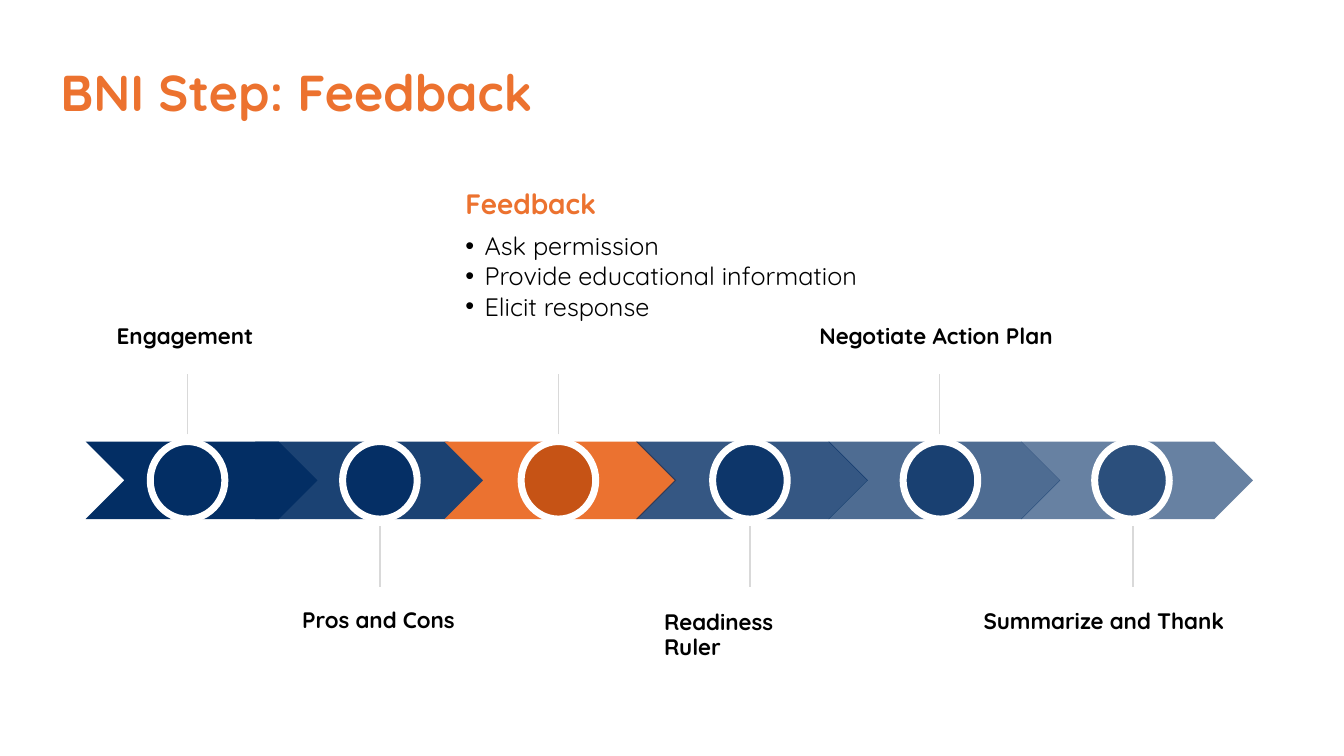
from dataclasses import dataclass

from lxml import etree
from pptx import Presentation
from pptx.dml.color import RGBColor
from pptx.enum.shapes import MSO_CONNECTOR, MSO_SHAPE
from pptx.enum.text import MSO_ANCHOR, MSO_AUTO_SIZE, PP_ALIGN
from pptx.oxml.ns import qn
from pptx.shapes.autoshape import Shape
from pptx.slide import Slide
from pptx.text.text import TextFrame, _Paragraph
from pptx.util import Pt

CHEVRON, ELLIPSE = MSO_SHAPE.CHEVRON, MSO_SHAPE.OVAL
STRAIGHT = MSO_CONNECTOR.STRAIGHT
LEFT = PP_ALIGN.LEFT
TOP, MIDDLE = MSO_ANCHOR.TOP, MSO_ANCHOR.MIDDLE
NO_AUTOFIT = MSO_AUTO_SIZE.NONE

FONT = "Quicksand"
COLOURS = {
    "navy": "032E64", "orange": "EB7230", "rust": "C25013", "heading": "EC722F",
    "white": "FFFFFF", "black": "000000", "grey": "D9D9D9",
}

BAND_TOP, BAND_HEIGHT = 315.4, 55.4
CHEVRON_WIDTH, CIRCLE_WIDTH = 165.6, 53.3
STEM_LENGTH, STEM_GAP = 43.2, 5.1


@dataclass(frozen=True)
class Step:
    left: float  # chevron
    centre: float  # circle
    stem: float
    above: bool
    chevron_opacity: int
    circle_opacity: int
    chevron_colour: str = "navy"
    circle_colour: str = "navy"


@dataclass(frozen=True)
class Label:
    text: str
    left: float
    top: float
    width: float
    wrap: bool = False


STEPS = [
    Step(61.2, 134, 134, True, 100, 100),
    Step(182.2, 271.4, 271.4, False, 90, 90),
    Step(317.5, 398.9, 398.9, True, 100, 90, "orange", "rust"),
    Step(454.3, 535.7, 535.7, False, 80, 80),
    Step(591.8, 671.8, 671, True, 70, 70),
    Step(729.4, 808.6, 809.3, False, 60, 60),
]
LABELS = [
    Label("Engagement", 76.3, 229, 115.2),
    Label("Pros and Cons", 208.8, 431.5, 126),
    Label("Readiness Ruler", 467.3, 433.4, 130, True),
    Label("Negotiate Action Plan", 578.2, 229, 186.5),
    Label("Summarize and Thank", 695.5, 432, 187.2),
]
FEEDBACK = ["Feedback", "Ask permission", "Provide educational information", "Elicit response"]


def colour(name: str) -> RGBColor:
    return RGBColor.from_string(COLOURS[name])


def add_band_shape(page: Slide, kind: MSO_SHAPE, left: float, width: float,
                   fill: str, opacity: int) -> Shape:
    shape = page.shapes.add_shape(kind, Pt(left), Pt(BAND_TOP), Pt(width), Pt(BAND_HEIGHT))
    shape.shadow.inherit = False
    shape.fill.solid()
    shape.fill.fore_color.rgb = colour(fill)
    shape.line.fill.background()
    if opacity < 100:
        solid = shape.fill._xPr.find(qn("a:solidFill"))
        etree.SubElement(solid[0], qn("a:alpha"), val=str(opacity * 1000))
    return shape


def add_circle(page: Slide, step: Step) -> None:
    circle = add_band_shape(page, ELLIPSE, step.centre - CIRCLE_WIDTH / 2, CIRCLE_WIDTH,
                            step.circle_colour, step.circle_opacity)
    circle.line.color.rgb = colour("white")
    circle.line.width = Pt(5)


def add_stem(page: Slide, step: Step) -> None:
    if step.above:
        start = BAND_TOP - STEM_GAP
    else:
        start = BAND_TOP + BAND_HEIGHT + STEM_GAP + STEM_LENGTH
    stem = page.shapes.add_connector(STRAIGHT, Pt(step.stem), Pt(start),
                                     Pt(step.stem), Pt(start - STEM_LENGTH))
    stem.line.color.rgb = colour("grey")
    stem.line.width = Pt(1)
    etree.SubElement(stem._element.spPr, qn("a:effectLst"))


def format_para(para: _Paragraph, size: float, ink: str, bold: bool = True,
                spacing: float = 0.9, after: float = 0) -> None:
    para.alignment = LEFT
    para.line_spacing = spacing
    para.space_before = Pt(0)
    para.space_after = Pt(after)
    for span in para.runs:
        span.font.name = FONT
        span.font.size = Pt(size)
        span.font.bold = bold
        span.font.color.rgb = colour(ink)


def add_bullet(para: _Paragraph, indent: float) -> None:
    properties = para._p.get_or_add_pPr()
    properties.set("marL", str(Pt(indent)))
    properties.set("indent", str(-Pt(indent)))
    etree.SubElement(properties, qn("a:buFont"), typeface="Arial")
    etree.SubElement(properties, qn("a:buChar"), char="•")


def add_text_box(page: Slide, left: float, top: float, width: float, height: float,
                 wrap: bool) -> TextFrame:
    frame = page.shapes.add_textbox(Pt(left), Pt(top), Pt(width), Pt(height)).text_frame
    frame.word_wrap = wrap
    frame.vertical_anchor = TOP
    return frame


def add_title(page: Slide, text: str) -> None:
    title = page.shapes.title
    title.left, title.top, title.width, title.height = Pt(28.8), Pt(45.4), Pt(785.5), Pt(44.6)
    frame = title.text_frame
    frame.text = text
    frame.margin_left = Pt(14.4)
    frame.vertical_anchor = MIDDLE
    frame.auto_size = NO_AUTOFIT
    format_para(frame.paragraphs[0], 36, "heading")


def add_label(page: Slide, label: Label) -> None:
    frame = add_text_box(page, label.left, label.top, label.width, 24.5, label.wrap)
    frame.text = label.text
    format_para(frame.paragraphs[0], 16, "black")


def add_feedback(page: Slide) -> None:
    frame = add_text_box(page, 325.4, 132.5, 294.5, 124.6, True)
    frame.text = "\n".join(FEEDBACK)
    heading, *bullets = frame.paragraphs
    format_para(heading, 20, "heading", after=7)
    for para in bullets:
        format_para(para, 18, "black", bold=False, spacing=1.0)
        add_bullet(para, 13.7)


def main() -> None:
    deck = Presentation()
    deck.slide_width, deck.slide_height = Pt(960), Pt(540)
    page = deck.slides.add_slide(deck.slide_layouts[5])
    add_title(page, "BNI Step: Feedback")

    # Arrow band
    for step in STEPS:
        add_band_shape(page, CHEVRON, step.left, CHEVRON_WIDTH,
                       step.chevron_colour, step.chevron_opacity)

    # Markers and stems
    for step in STEPS:
        add_circle(page, step)
        add_stem(page, step)

    # Step names and the highlighted step
    for label in LABELS:
        add_label(page, label)
    add_feedback(page)

    deck.save("out.pptx")


if __name__ == "__main__":
    main()
